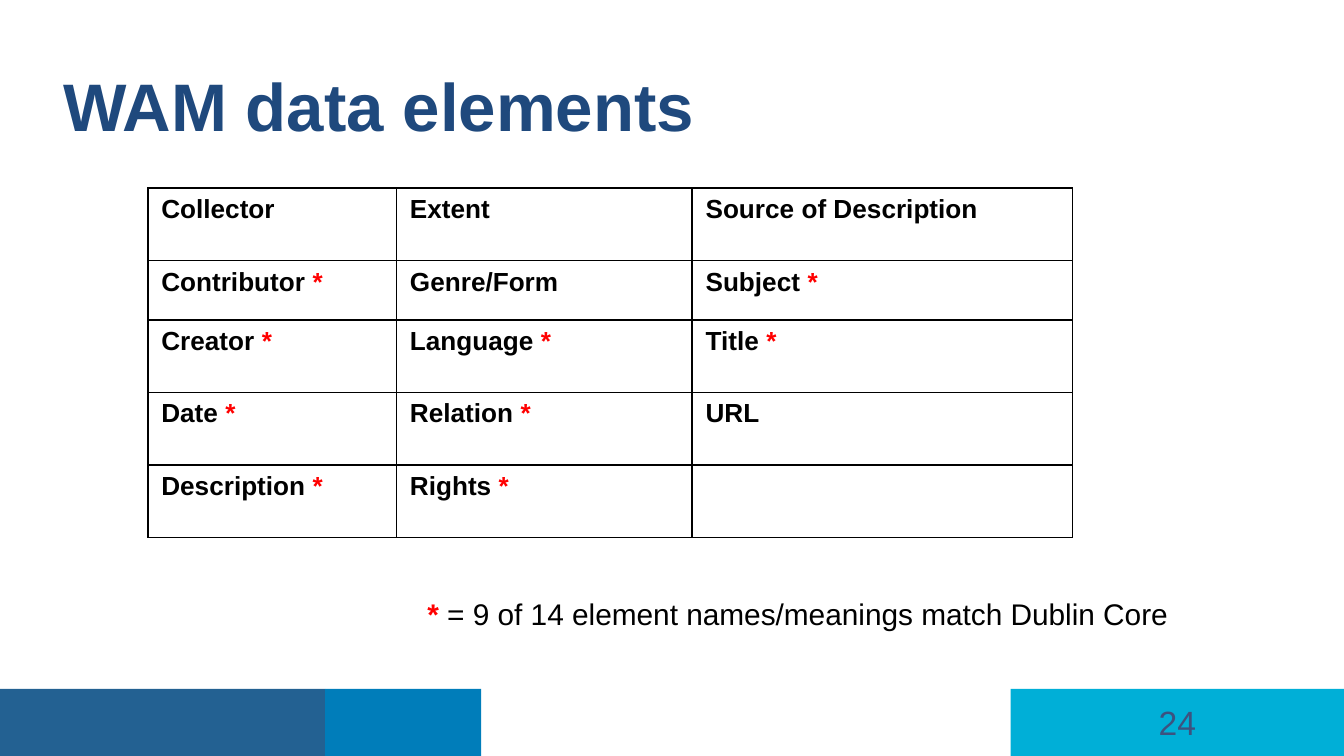
from lxml import etree
from pptx import Presentation
from pptx.dml.color import RGBColor
from pptx.enum.shapes import MSO_SHAPE
from pptx.enum.text import MSO_ANCHOR, MSO_AUTO_SIZE, PP_ALIGN
from pptx.oxml.ns import qn
from pptx.util import Inches, Pt

RECTANGLE = MSO_SHAPE.RECTANGLE
TOP, MIDDLE, BOTTOM = MSO_ANCHOR.TOP, MSO_ANCHOR.MIDDLE, MSO_ANCHOR.BOTTOM
LEFT, CENTER = PP_ALIGN.LEFT, PP_ALIGN.CENTER
BLACK, RED = "000000", "FF0000"
WIDTH = 10
HEIGHT = WIDTH * 9 / 16
MARGIN, CONTENT_WIDTH = 0.37, 9.23


def style(font, size, color, bold=False):
    font.name, font.size, font.bold = "Arial", Pt(size), bold
    font.color.rgb = RGBColor.from_string(color)


def write_starred(paragraph, text, size, bold):
    """Write text with each asterisk as a bold red run."""
    before, star, after = text.partition("*")
    for part in (before, star, after):
        if part:
            span = paragraph.add_run()
            span.text = part
            is_star = part == "*"
            style(span.font, size, RED if is_star else BLACK, bold or is_star)


deck = Presentation()
deck.slide_width, deck.slide_height = Inches(WIDTH), Inches(HEIGHT)
page = deck.slides.add_slide(deck.slide_layouts[1])
title, body = page.placeholders

# Footer band: left, width, colour
footer_height = 0.5
for left, width, color in ((0, 2.42, "236192"), (2.42, 1.16, "007DBA"),
                           (7.52, 2.48, "00AFD7")):
    band = page.shapes.add_shape(
        RECTANGLE, Inches(left), Inches(HEIGHT - footer_height),
        Inches(width), Inches(footer_height))
    band.shadow.inherit = False
    band.fill.solid()
    band.fill.fore_color.rgb = RGBColor.from_string(color)
    band.line.fill.background()

# The page number sits in the last band
band.text_frame.vertical_anchor = MIDDLE
number = band.text_frame.paragraphs[0]
number.text = "24"
number.alignment = CENTER
style(number.font, 18, "3D527F")

# Title and note placeholders: top, height, anchor, insets (left, top, bottom)
for box, top, height, anchor, insets in (
        (title, 0.38, 0.75, TOP, (0.1, 0.1, 0.1)),
        (body, 1.13, 3.63, BOTTOM, (2.81, 0.1, 0.06))):
    box.left, box.top = Inches(MARGIN), Inches(top)
    box.width, box.height = Inches(CONTENT_WIDTH), Inches(height)
    frame = box.text_frame
    frame.word_wrap = True
    frame.auto_size = MSO_AUTO_SIZE.NONE
    frame.vertical_anchor = anchor
    frame.margin_left, frame.margin_top, frame.margin_bottom = map(Inches, insets)
    frame.paragraphs[0].alignment = LEFT
    frame.paragraphs[0].space_before = Pt(0)

heading = title.text_frame.paragraphs[0]
heading.text = "WAM data elements"
style(heading.font, 36, "1F497D", True)

note = body.text_frame.paragraphs[0]
note_format = note._p.get_or_add_pPr()
note_format.set("marL", "0")
note_format.set("indent", "0")
etree.SubElement(note_format, qn("a:buNone"))
write_starred(note, "* = 9 of 14 element names/meanings match Dublin Core", 16, False)

# Table of data elements
elements = (
    ("Collector", "Extent", "Source of Description"),
    ("Contributor *", "Genre/Form", "Subject *"),
    ("Creator *", "Language *", "Title *"),
    ("Date *", "Relation *", "URL"),
    ("Description *", "Rights *", ""),
)
column_widths = (1.85, 2.2, 2.83)
row_heights = (0.54, 0.44, 0.54, 0.54, 0.54)
table = page.shapes.add_table(
    len(row_heights), len(column_widths), Inches(1.1), Inches(1.4),
    Inches(sum(column_widths)), Inches(sum(row_heights))).table
table.first_row = table.horz_banding = False
for column, width in zip(table.columns, column_widths):
    column.width = Inches(width)
for row, height, names in zip(table.rows, row_heights, elements):
    row.height = Inches(height)
    for cell, name in zip(row.cells, names):
        write_starred(cell.text_frame.paragraphs[0], name, 14, True)
        cell_format = cell._tc.get_or_add_tcPr()
        for side in ("a:lnL", "a:lnR", "a:lnT", "a:lnB"):
            border = etree.SubElement(cell_format, qn(side), w=str(Pt(1)))
            paint = etree.SubElement(border, qn("a:solidFill"))
            etree.SubElement(paint, qn("a:srgbClr"), val=BLACK)
        cell.fill.background()

deck.save("out.pptx")
